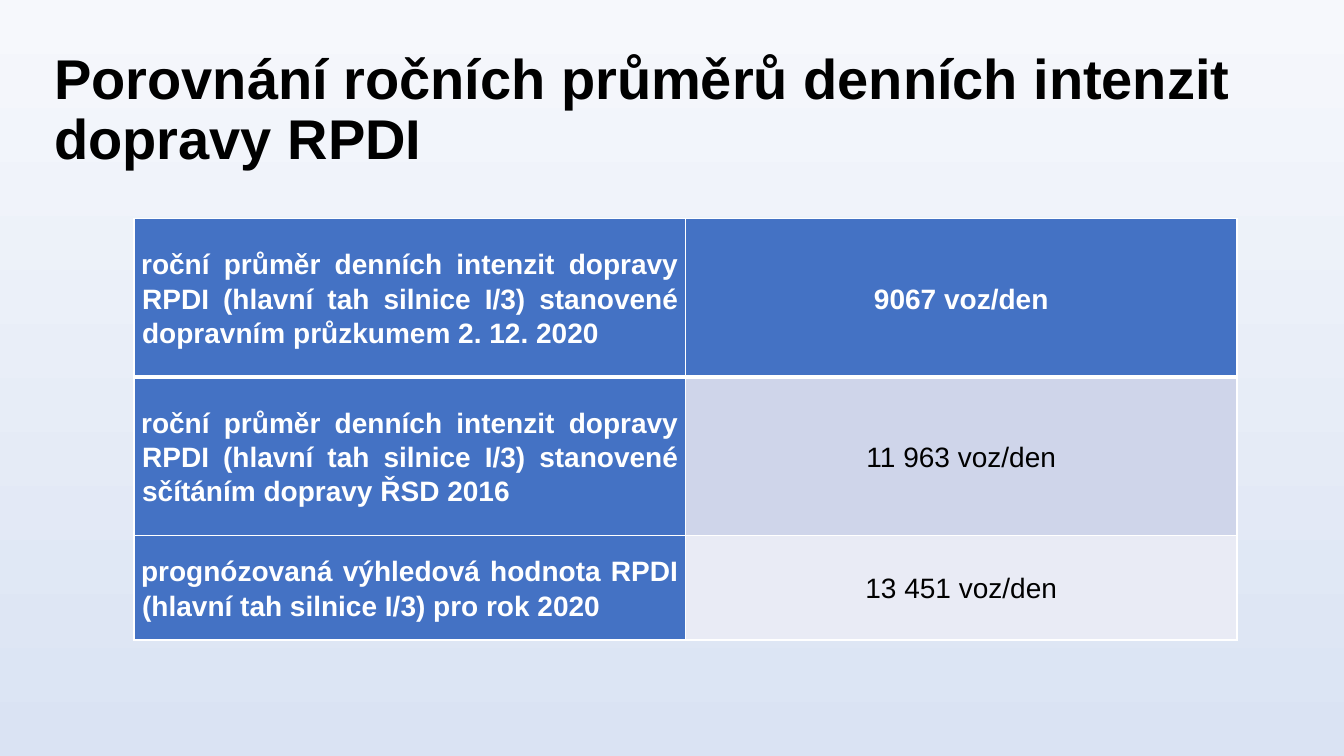
from lxml.etree import SubElement
from pptx import Presentation
from pptx.dml.color import RGBColor
from pptx.enum.text import MSO_ANCHOR as Anchor, PP_ALIGN as Align
from pptx.oxml.ns import qn
from pptx.util import Inches, Pt

TITLE = "Porovnání ročních průměrů denních intenzit dopravy RPDI"
ROWS = [
    ("roční průměr denních intenzit dopravy RPDI (hlavní tah silnice I/3) "
     "stanovené dopravním průzkumem 2. 12. 2020", "9067 voz/den"),
    ("roční průměr denních intenzit dopravy RPDI (hlavní tah silnice I/3) "
     "stanovené sčítáním dopravy ŘSD 2016", "11 963 voz/den"),
    ("prognózovaná výhledová hodnota RPDI (hlavní tah silnice I/3) "
     "pro rok 2020", "13 451 voz/den"),
]
ROW_HEIGHTS = [1.57, 1.57, 1.04]
COLUMN_WIDTH = 5.47
TABLE_LEFT, TABLE_TOP = 1.33, 2.17
TITLE_BOX = (0.44, 0.38, 12.45, 1.45)
BACKGROUND = ["F6F8FC", "DAE3F3"]
BLUE, WHITE, BLACK = "4472C4", "FFFFFF", "000000"
VALUE_FILLS = [BLUE, "CFD5EA", "E9EBF5"]
THIN, THICK = 1, 3
CELL_FORMAT = {"vertical_anchor": Anchor.MIDDLE,
               "margin_left": Inches(0.07), "margin_right": Inches(0.07),
               "margin_top": 0, "margin_bottom": 0}


def color(hex_value):
    return RGBColor.from_string(hex_value)


def set_all(target, values):
    for name, value in values.items():
        setattr(target, name, value)


def format_font(font, size, hex_value, bold):
    set_all(font, {"name": "Arial", "size": Pt(size), "bold": bold})
    font.color.rgb = color(hex_value)


def add_borders(cell, widths):
    """Draw white cell edges; must run before the cell gets its fill."""
    properties = cell._tc.get_or_add_tcPr()
    for side, width in widths.items():
        line = SubElement(properties, qn(f"a:ln{side}"), w=str(Pt(width)))
        fill = SubElement(line, qn("a:solidFill"))
        SubElement(fill, qn("a:srgbClr"), val=WHITE)


def fill_cell(cell, text, align, fill, text_color, bold):
    set_all(cell, CELL_FORMAT)
    cell.fill.solid()
    cell.fill.fore_color.rgb = color(fill)
    paragraph = cell.text_frame.paragraphs[0]
    paragraph.text = text
    set_all(paragraph, {"alignment": align, "line_spacing": 1.1,
                        "space_after": Pt(0.2)})
    indent = Inches(0.01)
    properties = paragraph._p.get_or_add_pPr()
    properties.set("marL", str(indent))
    properties.set("indent", str(-indent))
    format_font(paragraph.runs[0].font, 20, text_color, bold)


def add_title(slide):
    title = slide.shapes.title
    set_all(title, dict(zip(("left", "top", "width", "height"),
                            map(Inches, TITLE_BOX))))
    title.text_frame.vertical_anchor = Anchor.MIDDLE
    paragraph = title.text_frame.paragraphs[0]
    paragraph.text = TITLE
    set_all(paragraph, {"alignment": Align.LEFT, "line_spacing": 0.9})
    format_font(paragraph.runs[0].font, 40, BLACK, True)


def add_traffic_table(slide):
    table = slide.shapes.add_table(
        len(ROWS), 2, Inches(TABLE_LEFT), Inches(TABLE_TOP),
        Inches(2 * COLUMN_WIDTH), Inches(sum(ROW_HEIGHTS))).table
    table.first_col = True
    for column in table.columns:
        column.width = Inches(COLUMN_WIDTH)
    for index, (label, value) in enumerate(ROWS):
        table.rows[index].height = Inches(ROW_HEIGHTS[index])
        is_header = index == 0
        borders = {"L": THIN, "R": THIN, "T": THICK if index == 1 else THIN,
                   "B": THICK if is_header else THIN}
        label_cell, value_cell = table.rows[index].cells
        for cell in (label_cell, value_cell):
            add_borders(cell, borders)
        fill_cell(label_cell, label, Align.JUSTIFY, BLUE, WHITE, True)
        fill_cell(value_cell, value, Align.CENTER, VALUE_FILLS[index],
                  WHITE if is_header else BLACK, is_header)


def main():
    presentation = Presentation()
    presentation.slide_width = Inches(13.33)
    presentation.slide_height = Inches(7.5)
    slide = presentation.slides.add_slide(presentation.slide_layouts[5])
    background = slide.background.fill
    background.gradient()
    background.gradient_angle = 270
    for stop, hex_value in zip(background.gradient_stops, BACKGROUND):
        stop.color.rgb = color(hex_value)
    add_title(slide)
    add_traffic_table(slide)
    presentation.save("out.pptx")


if __name__ == "__main__":
    main()
